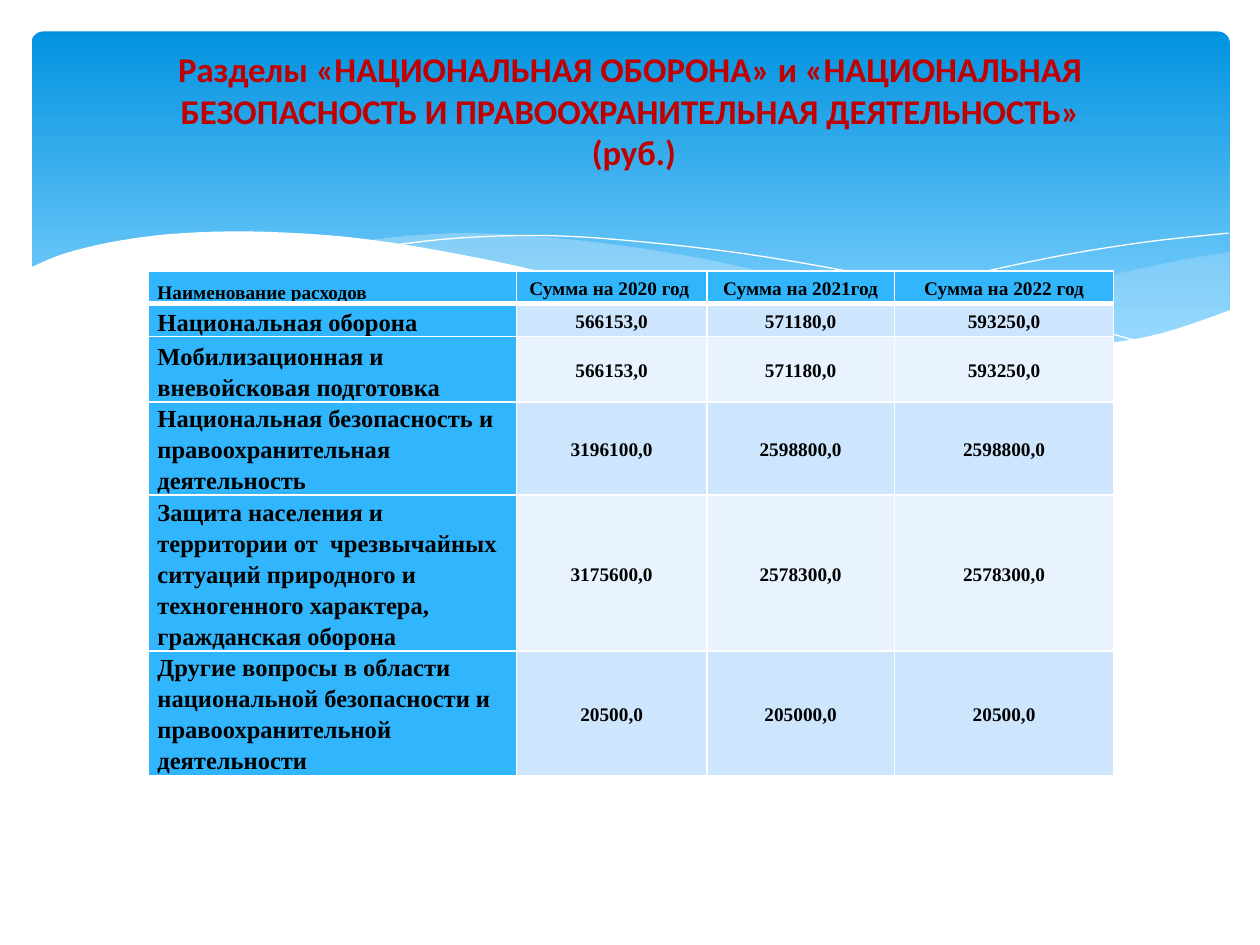
import lxml.etree
import pptx
import pptx.dml.color
import pptx.enum.shapes
import pptx.enum.text
import pptx.oxml
import pptx.oxml.ns
import pptx.util

THEME = {
    "sky_top": "0293E0", "sky_bottom": "83D3FE", "wave": "C6E7FC", "white": "FFFFFF",
    "title": "C00000", "text": "000000", "accent": "31B6FD", "bands": ("CEE5FE", "E8F3FF"),
    "title_font": "Calibri", "table_font": "Times New Roman",
    "title_size": 19.8, "label_size": 14, "value_size": 11,
}
RGB = pptx.dml.color.RGBColor.from_string
Pt = pptx.util.Pt
ANCHOR = pptx.enum.text.MSO_ANCHOR
ALIGN = pptx.enum.text.PP_ALIGN
qn = pptx.oxml.ns.qn

prs = pptx.Presentation()
prs.slide_width, prs.slide_height = pptx.util.Inches(10), pptx.util.Inches(7.5)
COL, ROW = prs.slide_width // 100, prs.slide_height // 75
s = prs.slides.add_slide(prs.slide_layouts[5])


def curve(knots, steps=5):
    """Sample a Catmull-Rom spline through knots given in grid columns and rows."""
    ends = [knots[0], *knots, knots[-1]]
    points = []
    for a, b, c, d in zip(ends, ends[1:], ends[2:], ends[3:]):
        for t in (i / steps for i in range(steps)):
            x, y = (0.5 * (2 * q + (r - p) * t + (2 * p - 5 * q + 4 * r - u) * t ** 2
                           + (3 * q - p - 3 * r + u) * t ** 3)
                    for p, q, r, u in zip(a, b, c, d))
            points.append((round(x * COL), round(y * ROW)))
    return points + [(round(knots[-1][0] * COL), round(knots[-1][1] * ROW))]


def add_wave(curves, closed=True):
    points = [point for knots in curves for point in curve(knots)]
    builder = s.shapes.build_freeform(*points[0])
    builder.add_line_segments(points[1:], close=closed)
    sp = builder.convert_to_shape()
    sp.shadow.inherit = False
    return sp


# Sky panel
sky = s.shapes.add_shape(pptx.enum.shapes.MSO_SHAPE.ROUNDED_RECTANGLE,
                         round(2.5 * COL), round(2.5 * ROW), round(95.1 * COL), 27 * ROW)
sky.adjustments[0] = 0.034
sky.shadow.inherit = False
sky.line.fill.background()
sky.fill.gradient()
sky.fill.gradient_angle = 270
for stop, position, color in zip(sky.fill.gradient_stops, (0, 0.9),
                                 (THEME["sky_top"], THEME["sky_bottom"])):
    stop.position, stop.color.rgb = position, RGB(color)

# Waves, from back to front
right_wave = [
    [(97.6, 20), (93.5, 20.7), (86.1, 22.3), (77.9, 24.2), (66.1, 26.5)],
    [(66.1, 26.5), (73.2, 27.4), (80.3, 27.8), (87.2, 27.4), (92.8, 26.3), (97.6, 24.7)],
]
middle_wave = [
    [(89.3, 27.3), (80.7, 26), (70.6, 24), (59.8, 21.4), (52.8, 20),
     (44.2, 18.9), (36.1, 18.5), (28.6, 19.1)],
    [(28.6, 19.1), (36.2, 20.3), (44.9, 22.2), (56.6, 24.8), (66.5, 26.6),
     (76.1, 27.7), (82.8, 27.8), (89.3, 27.3)],
]
front_wave = [
    [(97.7, 24.6), (92, 26.5), (86.3, 27.4), (79.3, 27.6), (70.8, 27),
     (60.3, 25.4), (50.3, 23.3), (39.1, 20.7), (29.2, 19), (21.1, 18.4),
     (14.6, 18.5), (9.5, 19.1), (5.2, 20.1), (2.3, 21.3)],
    [(2.3, 32.9), (97.7, 32.9)],
]
left_line = [(30.9, 19.5), (36.3, 18.9), (43.3, 18.7), (51, 19.2),
             (60.8, 20.4), (72.7, 22.6), (83.1, 25.1), (90.7, 27.2)]
right_line = [(61.3, 25.7), (67.2, 24.1), (74.8, 22.3), (83.6, 20.4),
              (91, 19.2), (97.5, 18.5)]
for curves, color, alpha in ((right_wave, THEME["wave"], 29),
                             (middle_wave, THEME["wave"], 40),
                             ([left_line], None, None),
                             ([right_line], None, None),
                             (front_wave, THEME["white"], 100)):
    sp = add_wave(curves, closed=color is not None)
    if color is None:
        sp.fill.background()
        sp.line.color.rgb = RGB(THEME["white"])
        sp.line.width = Pt(0)
        continue
    sp.line.fill.background()
    sp.fill.solid()
    sp.fill.fore_color.rgb = RGB(color)
    if alpha < 100:
        rgb = sp._element.spPr.find(".//" + qn("a:srgbClr"))
        lxml.etree.SubElement(rgb, qn("a:alpha"), val=str(alpha * 1000))

# Table of expenses
rows = [
    ("Наименование расходов", "Сумма на 2020 год ", "Сумма на 2021год", "Сумма на 2022 год"),
    ("Национальная оборона", "566153,0", "571180,0", "593250,0"),
    ("Мобилизационная и вневойсковая подготовка", "566153,0", "571180,0", "593250,0"),
    ("Национальная безопасность и правоохранительная деятельность",
     "3196100,0", "2598800,0", "2598800,0"),
    ("Защита населения и территории от  чрезвычайных ситуаций природного и "
     "техногенного характера, гражданская оборона", "3175600,0", "2578300,0", "2578300,0"),
    ("Другие вопросы в области национальной безопасности и правоохранительной деятельности",
     "20500,0", "205000,0", "20500,0"),
]
widths = (29.2, 15.1, 14.9, 17.4)
heights = (2.6, 2.6, 5.2, 5.2, 5.2, 5.2)
table = s.shapes.add_table(len(rows), len(widths), round(11.8 * COL), round(21.5 * ROW),
                           round(sum(widths) * COL), round(sum(heights) * ROW)).table
for column, width in zip(table.columns, widths):
    column.width = round(width * COL)
for row, height in zip(table.rows, heights):
    row.height = round(height * ROW)
for i, texts in enumerate(rows):
    for j, text in enumerate(texts):
        cell = table.cell(i, j)
        cell.margin_left = cell.margin_right = round(0.7 * COL)
        cell.margin_top = cell.margin_bottom = 0
        cell.vertical_anchor = ANCHOR.MIDDLE if j else ANCHOR.BOTTOM
        heavy_side = {0: "B", 1: "T"}.get(i)
        for side in "LRTB":
            weight = Pt(3 if side == heavy_side else 1)
            border = lxml.etree.SubElement(cell._tc.get_or_add_tcPr(), qn("a:ln" + side),
                                           w=str(weight))
            fill = lxml.etree.SubElement(border, qn("a:solidFill"))
            lxml.etree.SubElement(fill, qn("a:srgbClr"), val=THEME["white"])
        cell.fill.solid()
        is_heading = i == 0 or j == 0
        cell.fill.fore_color.rgb = RGB(THEME["accent"] if is_heading
                                       else THEME["bands"][(i - 1) % 2])
        p = cell.text_frame.paragraphs[0]
        p.text = text
        p.alignment = ALIGN.CENTER if j else ALIGN.LEFT
        p.line_spacing = 1.15
        p.font.name, p.font.bold = THEME["table_font"], True
        p.font.size = Pt(THEME["label_size"] if i and not j else THEME["value_size"])
        p.font.color.rgb = RGB(THEME["text"])

# Title, brought in front of the sky
title = s.shapes.title
title.left, title.top = 5 * COL, round(3.7 * ROW)
title.width, title.height = 90 * COL, round(13.7 * ROW)
tf = title.text_frame
tf.word_wrap = True
tf.auto_size = pptx.enum.text.MSO_AUTO_SIZE.NONE
tf.vertical_anchor = ANCHOR.TOP
tf.margin_top = round(0.1 * ROW)
p = tf.paragraphs[0]
p.text = ("Разделы «НАЦИОНАЛЬНАЯ ОБОРОНА» и «НАЦИОНАЛЬНАЯ БЕЗОПАСНОСТЬ И "
          "ПРАВООХРАНИТЕЛЬНАЯ ДЕЯТЕЛЬНОСТЬ»\v (руб.)")
p.alignment = ALIGN.CENTER
p.font.name, p.font.size, p.font.bold = THEME["title_font"], Pt(THEME["title_size"]), True
p.font.color.rgb = RGB(THEME["title"])
s.shapes._spTree.append(title._element)

prs.save("out.pptx")
